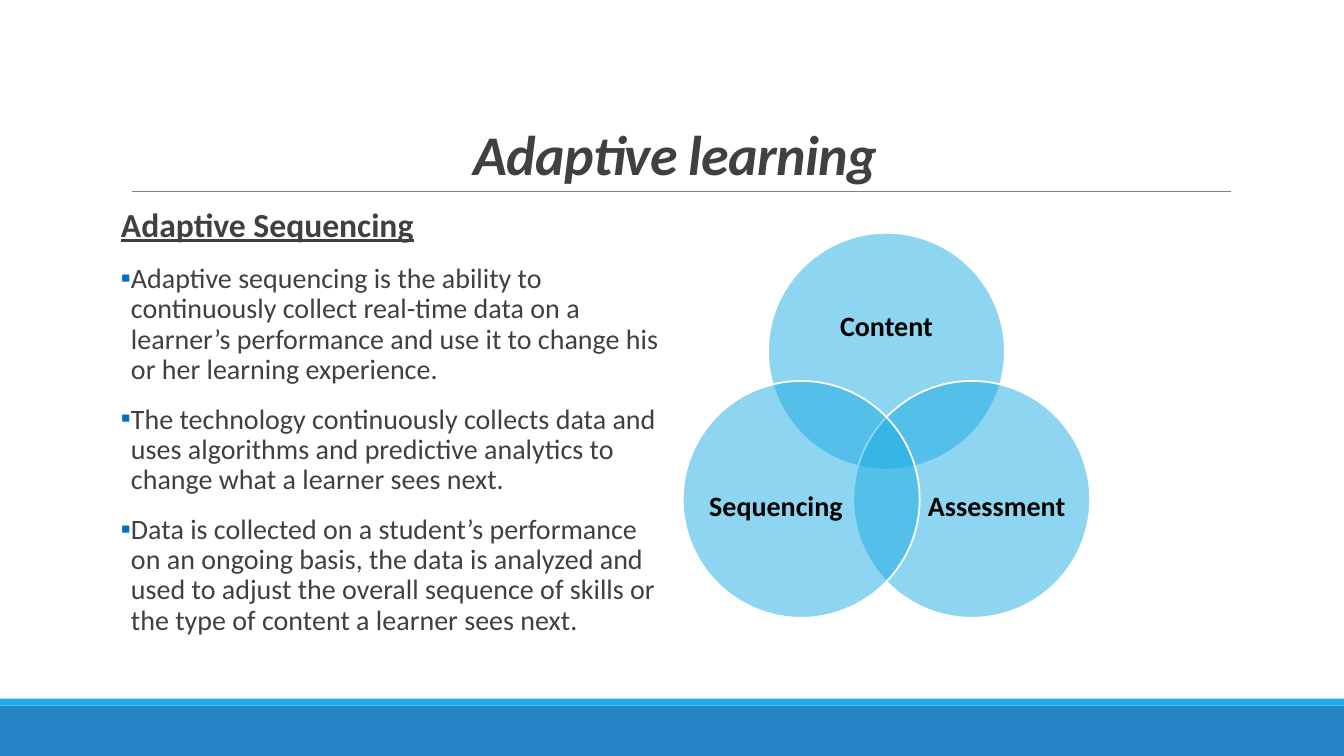
from lxml import etree
from pptx import Presentation
from pptx.dml.color import RGBColor
from pptx.enum import shapes, text
from pptx.oxml import ns
from pptx.util import Pt

# Content
TITLE = "Adaptive learning"
HEADING = "Adaptive Sequencing"
POINTS = [
    "Adaptive sequencing is the ability to continuously collect real-time data on a "
    "learner’s performance and use it to change his or her learning experience.",
    "The technology continuously collects data and uses algorithms and predictive "
    "analytics to change what a learner sees next.",
    "Data is collected on a student’s performance on an ongoing basis, the data is "
    "analyzed and used to adjust the overall sequence of skills or the type of content "
    "a learner sees next.",
]
# Label, circle offset (columns, rows), label centre offset, label size
CIRCLES = [
    ("Content", (0, 0), (0, -17), (124, 76)),
    ("Assessment", (1, 1), (17.8, 5.9), (101.5, 93)),
    ("Sequencing", (-1, 1), (-18, 5.9), (101.5, 93)),
]
SKY, BLUE, DARK, BULLET = "1CADE4", "2683C6", "404040", "0070C0"
WIDTH, HEIGHT = 960, 540
BAND, STRIP = 36, 5
DIAMETER, VENN_X, VENN_Y = 169.2, 633.2, 250.9
STEP_X, STEP_Y = 60.9, 105.8

deck = Presentation()
deck.slide_width, deck.slide_height = Pt(WIDTH), Pt(HEIGHT)
slide = deck.slides.add_slide(deck.slide_layouts[6])


def colour(value):
    return RGBColor.from_string(value)


def add_filled(kind, box, fill, outline=None, alpha=None):
    part = slide.shapes.add_shape(kind, *map(Pt, box))
    part.shadow.inherit = False
    part.fill.solid()
    part.fill.fore_color.rgb = colour(fill)
    if alpha:
        tint = part.fill._xPr.find(".//" + ns.qn("a:srgbClr"))
        etree.SubElement(tint, ns.qn("a:alpha"), val=str(alpha * 1000))
    if outline:
        part.line.color.rgb = colour(outline)
        part.line.width = Pt(1.25)
    else:
        part.line.fill.background()


def add_frame(box, insets=(0, 0), anchor=text.MSO_ANCHOR.TOP):
    frame = slide.shapes.add_textbox(*map(Pt, box)).text_frame
    frame.word_wrap = True
    frame.margin_left = frame.margin_right = Pt(insets[0])
    frame.margin_top = frame.margin_bottom = Pt(insets[1])
    frame.vertical_anchor = anchor
    return frame


def write(frame, words, size=20, ink=DARK, bold=False, italic=False, underline=False,
          centre=False, spacing=0.9, before=0, after=0, track=None, bullet=None):
    line = frame.paragraphs[0]
    if line.runs:
        line = frame.add_paragraph()
    line.alignment = text.PP_ALIGN.CENTER if centre else text.PP_ALIGN.LEFT
    line.line_spacing = spacing
    line.space_before, line.space_after = Pt(before), Pt(after)
    run = line.add_run()
    run.text = words
    font = run.font
    font.name, font.size, font.color.rgb = "Calibri", Pt(size), colour(ink)
    font.bold, font.italic, font.underline = bold, italic, underline
    if track:
        font._element.set("spc", str(round(track * 100)))
    if bullet:
        props = line._p.get_or_add_pPr()
        props.set("marL", str(Pt(7.2)))
        props.set("indent", str(-Pt(7.2)))
        tint = etree.SubElement(props, ns.qn("a:buClr"))
        etree.SubElement(tint, ns.qn("a:srgbClr"), val=BULLET)
        etree.SubElement(props, ns.qn("a:buFont"), typeface="Calibri")
        etree.SubElement(props, ns.qn("a:buChar"), char=bullet)


# Footer bands
band_top = HEIGHT - BAND
add_filled(shapes.MSO_SHAPE.RECTANGLE, (0, band_top, WIDTH, BAND), BLUE)
add_filled(shapes.MSO_SHAPE.RECTANGLE, (0, band_top - STRIP, WIDTH, STRIP), SKY)

# Title and its rule
rule = slide.shapes.add_connector(shapes.MSO_CONNECTOR.STRAIGHT,
                                  Pt(94.3), Pt(136.8), Pt(879), Pt(136.8))
rule.line.color.rgb = colour("808080")
rule.line.width = Pt(0.5)
etree.SubElement(rule._element.spPr, ns.qn("a:effectLst"))
title = add_frame((86.4, 22.6, 792, 114.2), (7.2, 3.6), text.MSO_ANCHOR.BOTTOM)
write(title, TITLE, size=40, bold=True, italic=True, centre=True, spacing=0.85, track=-0.5)

# Body text
body = add_frame((86.4, 145.4, 388.8, 316.8), (0, 3.6))
write(body, HEADING, size=24, bold=True, underline=True, before=12, after=2)
for point in POINTS:
    write(body, point, before=12, after=2, bullet="▪")

# Venn diagram
for label, (column, row), (shift_x, shift_y), (wide, high) in CIRCLES:
    x, y = VENN_X + column * STEP_X, VENN_Y + row * STEP_Y
    add_filled(shapes.MSO_SHAPE.OVAL,
               (x - DIAMETER / 2, y - DIAMETER / 2, DIAMETER, DIAMETER),
               SKY, outline="FFFFFF", alpha=50)
    caption = add_frame((x + shift_x - wide / 2, y + shift_y - high / 2, wide, high),
                        anchor=text.MSO_ANCHOR.MIDDLE)
    write(caption, label, ink="000000", bold=True, centre=True)

deck.save("out.pptx")
